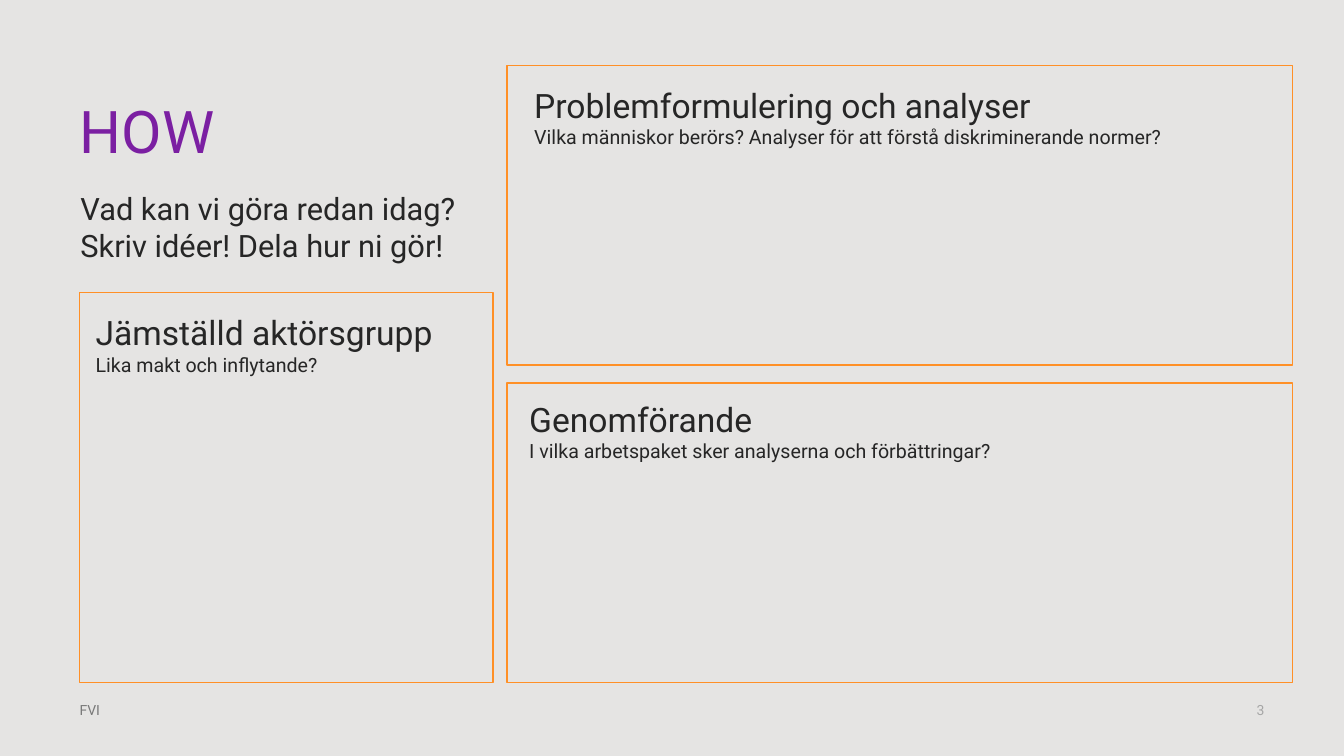
from dataclasses import dataclass

from pptx import Presentation
from pptx.dml.color import RGBColor
from pptx.enum.shapes import MSO_SHAPE
from pptx.enum.text import MSO_ANCHOR, PP_ALIGN
from pptx.util import Inches, Pt


@dataclass(frozen=True)
class Theme:
    font: str = "Roboto"
    background: str = "E5E4E3"
    purple: str = "7B1FA2"
    orange: str = "FF9027"
    ink: str = "262626"
    footer: str = "797979"
    number: str = "A6A6A6"
    title_size: int = 42
    heading_size: int = 24
    intro_size: int = 22
    question_size: int = 14
    footer_size: int = 10


theme = Theme()


def write(frame, lines, margins=True, align=PP_ALIGN.LEFT):
    """Fill a text frame with (text, size, colour) lines."""
    frame.word_wrap = True
    frame.vertical_anchor = MSO_ANCHOR.TOP
    if not margins:
        frame.margin_left = frame.margin_right = 0
        frame.margin_top = frame.margin_bottom = 0
    frame.text = "\n".join(text for text, _, _ in lines)
    for paragraph, (_, size, color) in zip(frame.paragraphs, lines):
        paragraph.alignment = align
        font = paragraph.runs[0].font
        font.name = theme.font
        font.size = Pt(size)
        font.color.rgb = RGBColor.from_string(color)


def add_text(left, top, width, height, lines, **options):
    box = slide.shapes.add_textbox(
        Inches(left), Inches(top), Inches(width), Inches(height))
    write(box.text_frame, lines, **options)


presentation = Presentation()
presentation.slide_width = Inches(13.33)
presentation.slide_height = Inches(7.5)
slide = presentation.slides.add_slide(presentation.slide_layouts[5])
slide.background.fill.solid()
slide.background.fill.fore_color.rgb = RGBColor.from_string(theme.background)

# Title
title = slide.shapes.title
title.left, title.top = Inches(0.79), Inches(1.02)
title.width, title.height = Inches(11.76), Inches(0.77)
write(title.text_frame, [("HOW", theme.title_size, theme.purple)], margins=False)
title.text_frame.paragraphs[0].line_spacing = 0.9

# Introduction
add_text(0.7, 1.83, 4.5, 1.14, [
    ("Vad kan vi göra redan idag?", theme.intro_size, theme.ink),
    ("Skriv idéer! Dela hur ni gör!", theme.intro_size, theme.ink),
])

# Work areas: frame, text position and width, heading, question
areas = [
    ((0.79, 2.9, 4.1, 3.87), (0.85, 3.05, 4.5),
     "Jämställd aktörsgrupp", "Lika makt och inflytande?"),
    ((5.03, 0.65, 7.79, 2.97), (5.2, 0.79, 7.35),
     "Problemformulering och analyser",
     "Vilka människor berörs? Analyser för att förstå diskriminerande normer?"),
    ((5.03, 3.8, 7.79, 2.97), (5.15, 3.91, 7.35),
     "Genomförande", "I vilka arbetspaket sker analyserna och förbättringar?"),
]
for bounds, (left, top, width), heading, question in areas:
    area = slide.shapes.add_shape(MSO_SHAPE.RECTANGLE, *map(Inches, bounds))
    area.shadow.inherit = False
    area.fill.background()
    area.line.color.rgb = RGBColor.from_string(theme.orange)
    area.line.width = Pt(1)
    add_text(left, top, width, 1.04, [
        (heading, theme.heading_size, theme.ink),
        (question, theme.question_size, theme.ink),
    ])

# Footer
add_text(0.79, 6.96, 1.3, 0.17,
         [("FVI", theme.footer_size, theme.footer)], margins=False)
add_text(12.12, 6.96, 0.42, 0.14,
         [("3", theme.footer_size, theme.number)],
         margins=False, align=PP_ALIGN.RIGHT)

presentation.save("out.pptx")
